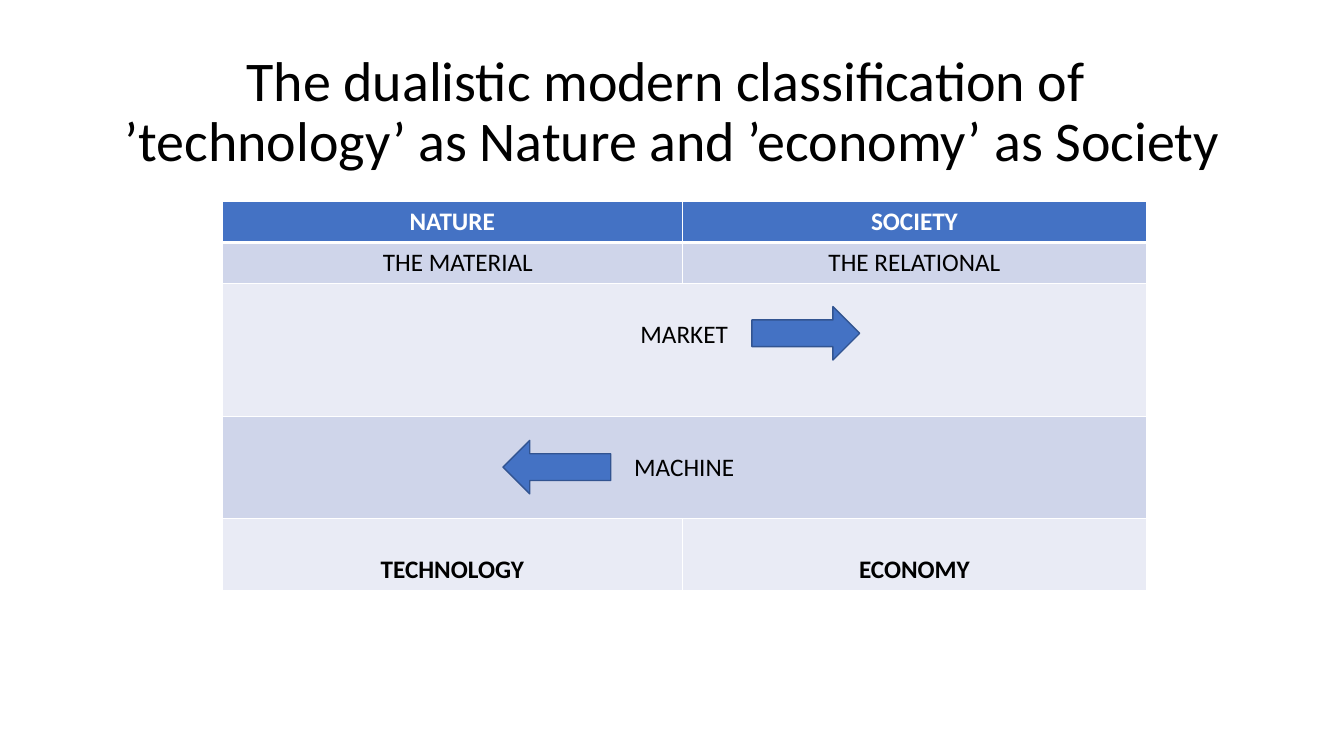
import dataclasses

import pptx
import pptx.dml.color
import pptx.enum.shapes
import pptx.enum.text
import pptx.oxml
import pptx.oxml.ns
import pptx.util

Pt = pptx.util.Pt
SHAPE = pptx.enum.shapes.MSO_SHAPE
CENTER = pptx.enum.text.PP_ALIGN.CENTER


@dataclasses.dataclass(frozen=True)
class Theme:
    font: str = "Calibri"
    title_size: float = 40
    body_size: float = 18
    text: str = "000000"
    white: str = "FFFFFF"
    accent: str = "4472C4"
    accent_edge: str = "325491"
    band_dark: str = "CFD5EA"
    band_light: str = "E9EBF5"


@dataclasses.dataclass(frozen=True)
class Row:
    height: float
    fill: str
    labels: tuple  # a single label spans both columns
    color: str = Theme.text
    bold: bool = False
    top: float = 3.6
    extra_left: float = 0


class SlideBuilder:
    def __init__(self, deck, theme):
        self.theme = theme
        self.slide = deck.slides.add_slide(deck.slide_layouts[5])

    def rgb(self, value):
        return pptx.dml.color.RGBColor.from_string(value)

    def run(self, paragraph, text, size, color, bold=False):
        run = paragraph.add_run()
        run.text = text
        font = run.font
        font.name, font.size, font.bold = self.theme.font, Pt(size), bold
        font.color.rgb = self.rgb(color)

    def title(self, left, top, width, height, lines):
        heading = self.slide.shapes.title
        heading.left, heading.top = Pt(left), Pt(top)
        heading.width, heading.height = Pt(width), Pt(height)
        frame = heading.text_frame
        frame.word_wrap = True
        frame.auto_size = pptx.enum.text.MSO_AUTO_SIZE.NONE
        frame.vertical_anchor = pptx.enum.text.MSO_ANCHOR.MIDDLE
        paragraph = frame.paragraphs[0]
        paragraph.alignment, paragraph.line_spacing = CENTER, 0.9
        for index, line in enumerate(lines):
            if index:
                paragraph.add_line_break()
            self.run(paragraph, line, self.theme.title_size, self.theme.text)

    def borders(self, cell, widths):
        properties = cell._tc.get_or_add_tcPr()
        for position, (side, width) in enumerate(widths.items()):
            properties.insert(position, pptx.oxml.parse_xml(
                f'<a:ln{side} {pptx.oxml.ns.nsdecls("a")} w="{Pt(width)}"><a:solidFill>'
                f'<a:srgbClr val="{self.theme.white}"/></a:solidFill></a:ln{side}>'))

    def table(self, left, top, widths, rows):
        height = sum(row.height for row in rows)
        table = self.slide.shapes.add_table(
            len(rows), len(widths), Pt(left), Pt(top), Pt(sum(widths)), Pt(height)).table
        for column, width in zip(table.columns, widths):
            column.width = Pt(width)
        for index, row in enumerate(rows):
            table.rows[index].height = Pt(row.height)
            cells = [table.cell(index, column) for column in range(len(widths))]
            if len(row.labels) == 1:
                cells[0].merge(cells[-1])
            for cell in cells:
                cell.fill.solid()
                cell.fill.fore_color.rgb = self.rgb(row.fill)
                # A thick rule parts the header from the body
                self.borders(cell, {"L": 1, "R": 1, "T": 3 if index == 1 else 1,
                                    "B": 3 if index == 0 else 1})
            for column, label in enumerate(row.labels):
                cell = cells[column]
                cell.margin_top = Pt(row.top)
                if column == 0:
                    cell.margin_left = Pt(7.2 + row.extra_left)
                paragraph = cell.text_frame.paragraphs[0]
                paragraph.alignment = CENTER
                self.run(paragraph, label, self.theme.body_size, row.color, row.bold)

    def arrow(self, kind, left, top, width=77, height=38.2):
        arrow = self.slide.shapes.add_shape(kind, Pt(left), Pt(top), Pt(width), Pt(height))
        arrow.shadow.inherit = False
        arrow.fill.solid()
        arrow.fill.fore_color.rgb = self.rgb(self.theme.accent)
        arrow.line.color.rgb = self.rgb(self.theme.accent_edge)
        arrow.line.width = Pt(1)


def main():
    deck = pptx.Presentation()
    deck.slide_width, deck.slide_height = Pt(960), Pt(540)
    theme = Theme()
    builder = SlideBuilder(deck, theme)

    # Heading
    builder.title(66, 28.75, 828, 104.4, [
        "The dualistic modern classification of ",
        "’technology’ as Nature and ’economy’ as Society"])

    # Classification table; lower rows start one text line down
    line_down = 25.6
    builder.table(158.6, 144, [329, 331.2], [
        Row(29.2, theme.accent, ("NATURE", "SOCIETY"), theme.white, bold=True),
        Row(29.2, theme.band_dark, ("THE MATERIAL", "THE RELATIONAL"), extra_left=8),
        Row(95, theme.band_light, ("MARKET",), top=line_down),
        Row(73, theme.band_dark, ("MACHINE",), top=line_down),
        Row(51.4, theme.band_light, ("TECHNOLOGY", "ECONOMY"), bold=True, top=line_down)])

    # Market leans to society, machine to nature
    builder.arrow(SHAPE.RIGHT_ARROW, 537.1, 219)
    builder.arrow(SHAPE.LEFT_ARROW, 359.3, 314.6)

    deck.save("out.pptx")


if __name__ == "__main__":
    main()
